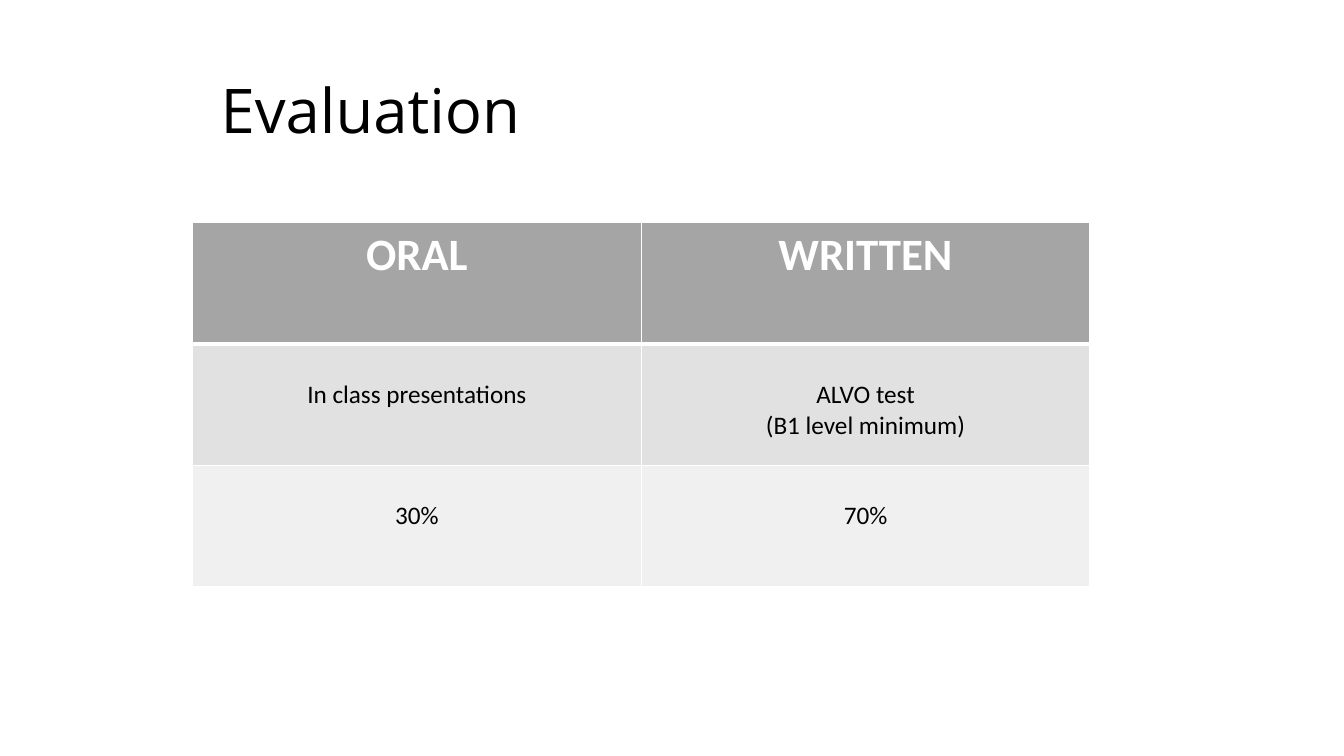
from dataclasses import dataclass

from lxml import etree
from pptx import Presentation
from pptx.dml.color import RGBColor
from pptx.enum.text import MSO_ANCHOR, PP_ALIGN
from pptx.oxml.ns import qn
from pptx.util import Inches, Pt

MIDDLE = MSO_ANCHOR.MIDDLE
TOP = MSO_ANCHOR.TOP
LEFT = PP_ALIGN.LEFT
CENTER = PP_ALIGN.CENTER


@dataclass(frozen=True)
class Theme:
    title_font: str = "Open Sans"
    body_font: str = "Calibri"
    title_size: int = 44
    header_size: int = 32
    body_size: int = 18
    text: str = "000000"
    header_text: str = "FFFFFF"
    header_fill: str = "A5A5A5"
    band_fills: tuple = ("E1E1E1", "F0F0F0")
    rule: str = "FFFFFF"
    thin_rule: int = 1
    thick_rule: int = 3


class SlideBuilder:
    def __init__(self, slide, theme):
        self.slide = slide
        self.theme = theme

    def set_text(self, frame, text, font, size, color, bold=False, align=LEFT):
        frame.text = text
        for paragraph in frame.paragraphs:
            paragraph.alignment = align
            paragraph.font.name = font
            paragraph.font.size = Pt(size)
            paragraph.font.bold = bold
            paragraph.font.color.rgb = RGBColor.from_string(color)

    def title(self, text, left, top, width, height):
        box = self.slide.shapes.add_textbox(
            Inches(left), Inches(top), Inches(width), Inches(height))
        frame = box.text_frame
        frame.word_wrap = True
        frame.vertical_anchor = MIDDLE
        theme = self.theme
        self.set_text(frame, text, theme.title_font, theme.title_size, theme.text)
        frame.paragraphs[0].line_spacing = 0.9

    def borders(self, cell, top, bottom):
        properties = cell._tc.get_or_add_tcPr()
        thin = self.theme.thin_rule
        widths = {"a:lnL": thin, "a:lnR": thin, "a:lnT": top, "a:lnB": bottom}
        for position, (side, width) in enumerate(widths.items()):
            line = etree.Element(qn(side), w=str(Pt(width)))
            fill = etree.SubElement(line, qn("a:solidFill"))
            etree.SubElement(fill, qn("a:srgbClr"), val=self.theme.rule)
            properties.insert(position, line)

    def cell(self, cell, text, row):
        theme = self.theme
        cell.vertical_anchor = TOP
        cell.fill.solid()
        if row == 0:
            fill = theme.header_fill
            self.set_text(cell.text_frame, text, theme.body_font,
                          theme.header_size, theme.header_text, True, CENTER)
        else:
            fill = theme.band_fills[(row - 1) % len(theme.band_fills)]
            cell.margin_top = Inches(0.35)
            self.set_text(cell.text_frame, text, theme.body_font,
                          theme.body_size, theme.text, False, CENTER)
        cell.fill.fore_color.rgb = RGBColor.from_string(fill)
        self.borders(cell,
                     theme.thick_rule if row == 1 else theme.thin_rule,
                     theme.thick_rule if row == 0 else theme.thin_rule)

    def table(self, rows, left, top, width, height):
        table = self.slide.shapes.add_table(
            len(rows), len(rows[0]),
            Inches(left), Inches(top), Inches(width), Inches(height)).table
        for row, texts in enumerate(rows):
            for column, text in enumerate(texts):
                self.cell(table.cell(row, column), text, row)


def main():
    presentation = Presentation()
    presentation.slide_width = Inches(13.33)
    presentation.slide_height = Inches(7.5)
    slide = presentation.slides.add_slide(presentation.slide_layouts[6])

    evaluation = SlideBuilder(slide, Theme())
    evaluation.title("Evaluation", 2.09, 0.4, 7.71, 1.45)
    grading = [
        ("ORAL", "WRITTEN"),
        ("In class presentations", "ALVO test\n(B1 level minimum)"),
        ("30%", "70%"),
    ]
    evaluation.table(grading, 1.91, 2.21, 8.9, 3.61)
    presentation.save("out.pptx")


if __name__ == "__main__":
    main()
